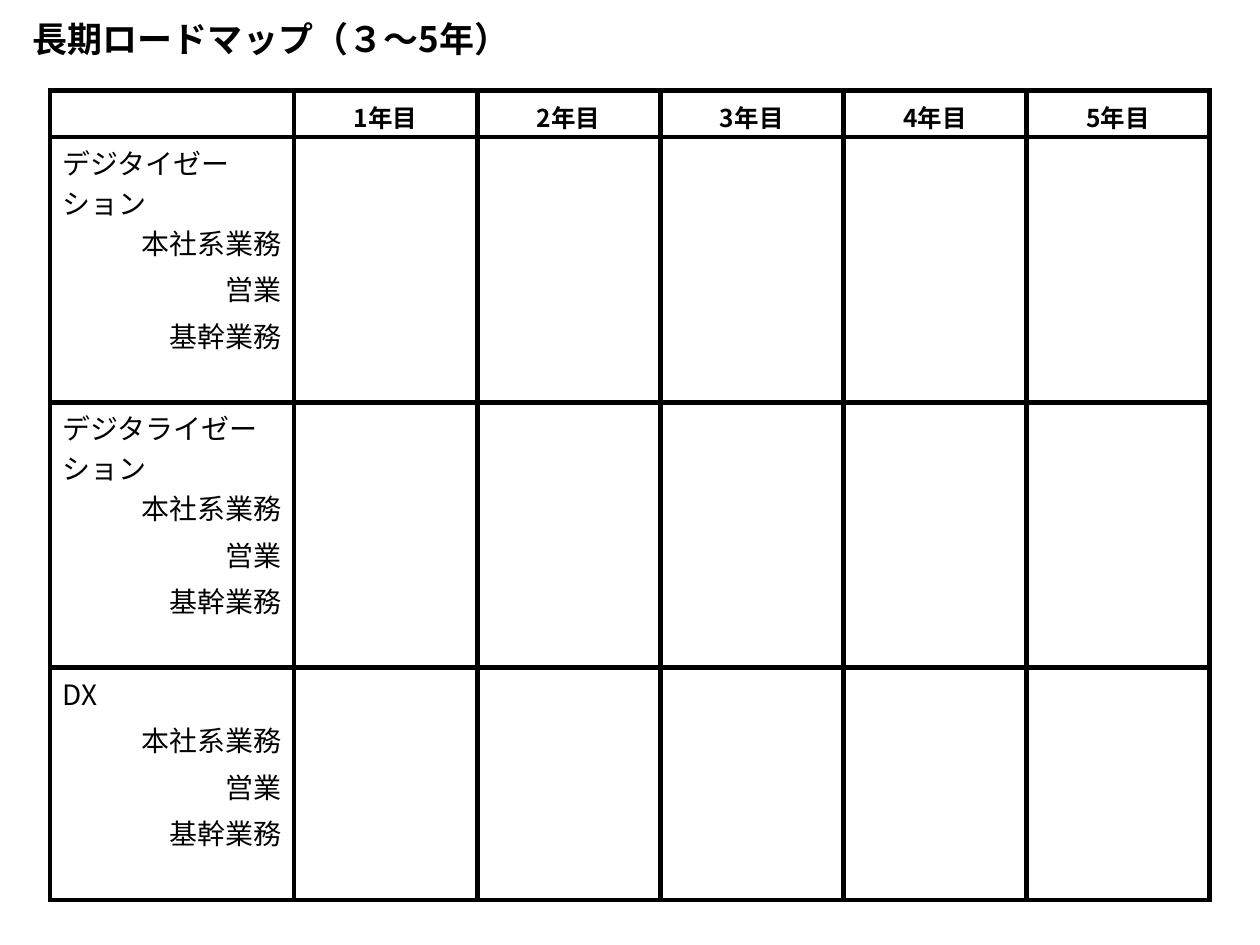
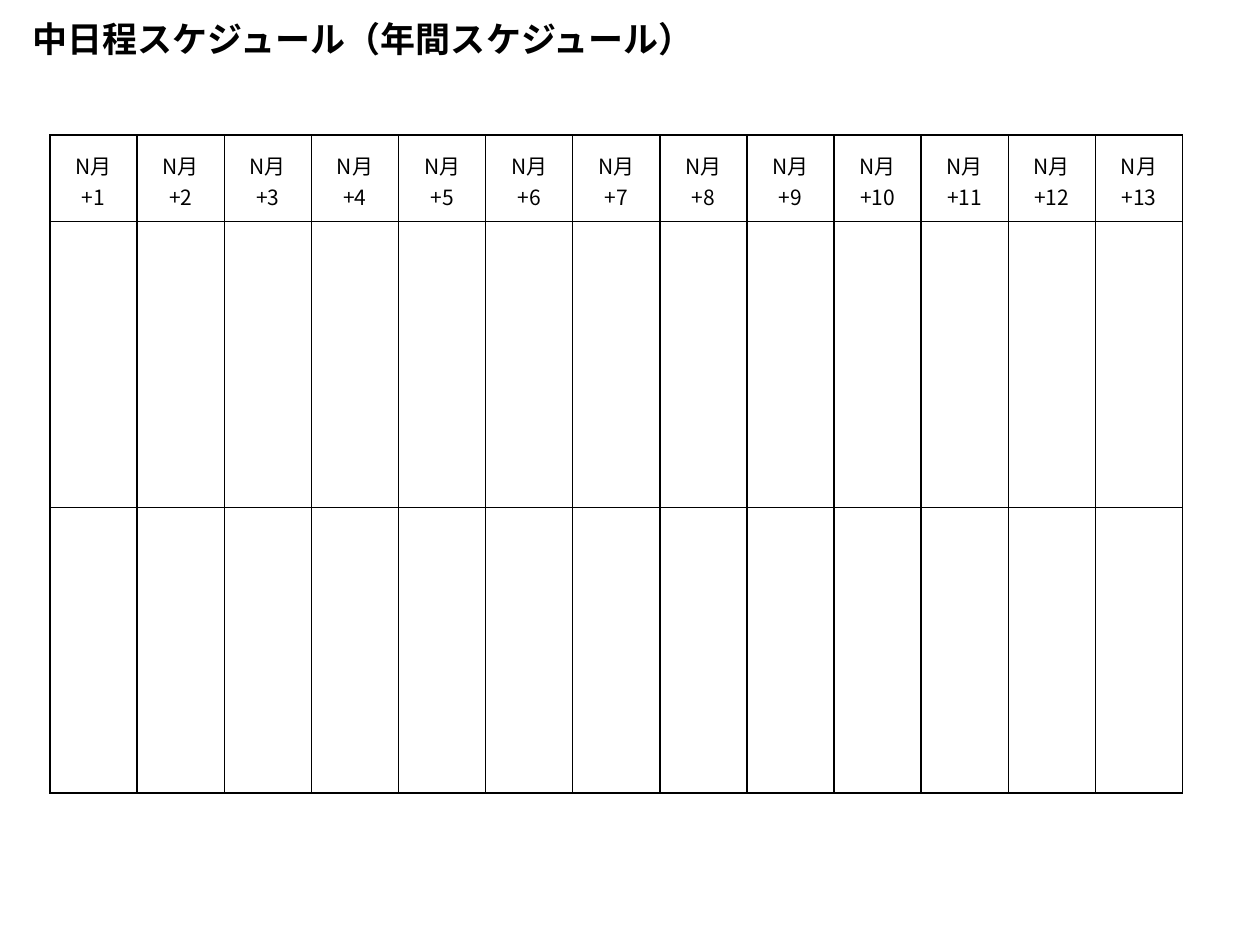
from dataclasses import dataclass

from lxml.etree import SubElement
from pptx import Presentation
from pptx.dml.color import RGBColor
from pptx.enum.text import MSO_ANCHOR, PP_ALIGN
from pptx.oxml.ns import qn
from pptx.util import Cm, Pt


@dataclass(frozen=True)
class Theme:
    """Colours, font, type sizes and rule widths shared by the slides."""
    font: str = "Noto Sans CJK JP"
    ink: str = "000000"
    paper: str = "FFFFFF"
    title: int = 20
    year: int = 14
    task: int = 16
    month: int = 12
    thick: int = 3
    thin: int = 1


THEME = Theme()
SIDES = {"L": "a:lnL", "R": "a:lnR", "T": "a:lnT", "B": "a:lnB"}
PHASES = ["デジタイゼーション", "デジタライゼーション", "DX"]
TASKS = ["本社系業務", "営業", "基幹業務"]
YEARS = 5
MONTHS = 13
SCHEDULE_WIDTH = 22.84


def write(paragraph, text, size, bold=False, align=PP_ALIGN.LEFT):
    """Add one styled run to a paragraph."""
    paragraph.alignment = align
    run = paragraph.add_run()
    run.text = text
    run.font.size = Pt(size)
    run.font.bold = bold
    run.font.name = THEME.font
    run.font.color.rgb = RGBColor.from_string(THEME.ink)
    SubElement(run._r.get_or_add_rPr(), qn("a:ea"), typeface=THEME.font)


def add_title(slide, text):
    """Add the slide title at the top left."""
    title = slide.shapes.add_textbox(Cm(0.41), Cm(0.23), Cm(20), Cm(1.11))
    title.text_frame.word_wrap = True
    write(title.text_frame.paragraphs[0], text, THEME.title, bold=True)


def rule_cell(cell, width, ruled):
    """Draw the named sides of a cell and clear the others."""
    properties = cell._tc.get_or_add_tcPr()
    for side, tag in SIDES.items():
        line = SubElement(properties, qn(tag), w=str(Pt(width)))
        if side in ruled:
            fill = SubElement(line, qn("a:solidFill"))
            SubElement(fill, qn("a:srgbClr"), val=THEME.ink)
        else:
            SubElement(line, qn("a:noFill"))


def add_grid(slide, left, top, widths, heights, rule, ruled_sides):
    """Add an empty ruled table, with the ruled sides chosen by row."""
    grid = slide.shapes.add_table(
        len(heights), len(widths), Cm(left), Cm(top),
        Cm(sum(widths)), Cm(sum(heights))).table
    grid.first_row = grid.horz_banding = False
    for column, width in zip(grid.columns, widths):
        column.width = Cm(width)
    for index, (row, height) in enumerate(zip(grid.rows, heights)):
        row.height = Cm(height)
        for cell in row.cells:
            cell.margin_top, cell.margin_bottom = Cm(0.1), Cm(0)
            rule_cell(cell, rule, ruled_sides(index))
            cell.fill.solid()
            cell.fill.fore_color.rgb = RGBColor.from_string(THEME.paper)
            SubElement(cell.text_frame.paragraphs[0]._p,
                       qn("a:endParaRPr"), sz=str(THEME.month * 100))
    return grid


def fill_cell(cell, lines, size, bold=False, align=PP_ALIGN.CENTER,
              anchor=MSO_ANCHOR.MIDDLE):
    """Write one paragraph per line into a cell."""
    cell.vertical_anchor = anchor
    frame = cell.text_frame
    for index, line in enumerate(lines):
        paragraph = frame.add_paragraph() if index else frame.paragraphs[0]
        write(paragraph, line, size, bold, align)


def build_roadmap(slide):
    """Build the long-term roadmap by phase and year."""
    add_title(slide, "長期ロードマップ（３～5年）")
    block = len(TASKS) + 2
    task_heights = [0.94] * len(TASKS) + [0.92]
    heights = [0.93]
    for phase in PHASES:
        heights += [1.61 if len(phase) > 8 else 0.94] + task_heights

    def ruled_sides(row):
        """Rule the header and the outline of each phase block."""
        if row == 0:
            return "LRTB"
        place = (row - 1) % block
        return "LR" + ("T" if place == 0 else "B" if place == block - 1 else "")

    roadmap = add_grid(slide, 1.01, 1.83, [4.92] + [3.69] * YEARS, heights,
                       THEME.thick, ruled_sides)
    for year in range(1, YEARS + 1):
        fill_cell(roadmap.cell(0, year), [f"{year}年目"], THEME.year, bold=True)
    for number, phase in enumerate(PHASES):
        first = 1 + number * block
        fill_cell(roadmap.cell(first, 0), [phase], THEME.task,
                  align=PP_ALIGN.LEFT, anchor=MSO_ANCHOR.TOP)
        for row, task in enumerate(TASKS, first + 1):
            fill_cell(roadmap.cell(row, 0), [task], THEME.task,
                      align=PP_ALIGN.RIGHT, anchor=MSO_ANCHOR.TOP)


def build_schedule(slide):
    """Build the yearly schedule by month."""
    add_title(slide, "中日程スケジュール（年間スケジュール）")
    schedule = add_grid(slide, 1.01, 2.72, [SCHEDULE_WIDTH / MONTHS] * MONTHS,
                        [1.75, 5.76, 5.76], THEME.thin, lambda row: "LRTB")
    for month in range(MONTHS):
        fill_cell(schedule.cell(0, month), ["N月", f"+{month + 1}"], THEME.month)


def main():
    """Build both slides and save the presentation."""
    deck = Presentation()
    deck.slide_width, deck.slide_height = Cm(25.4), Cm(19.05)
    for build in (build_roadmap, build_schedule):
        build(deck.slides.add_slide(deck.slide_layouts[6]))
    deck.save("out.pptx")


if __name__ == "__main__":
    main()
